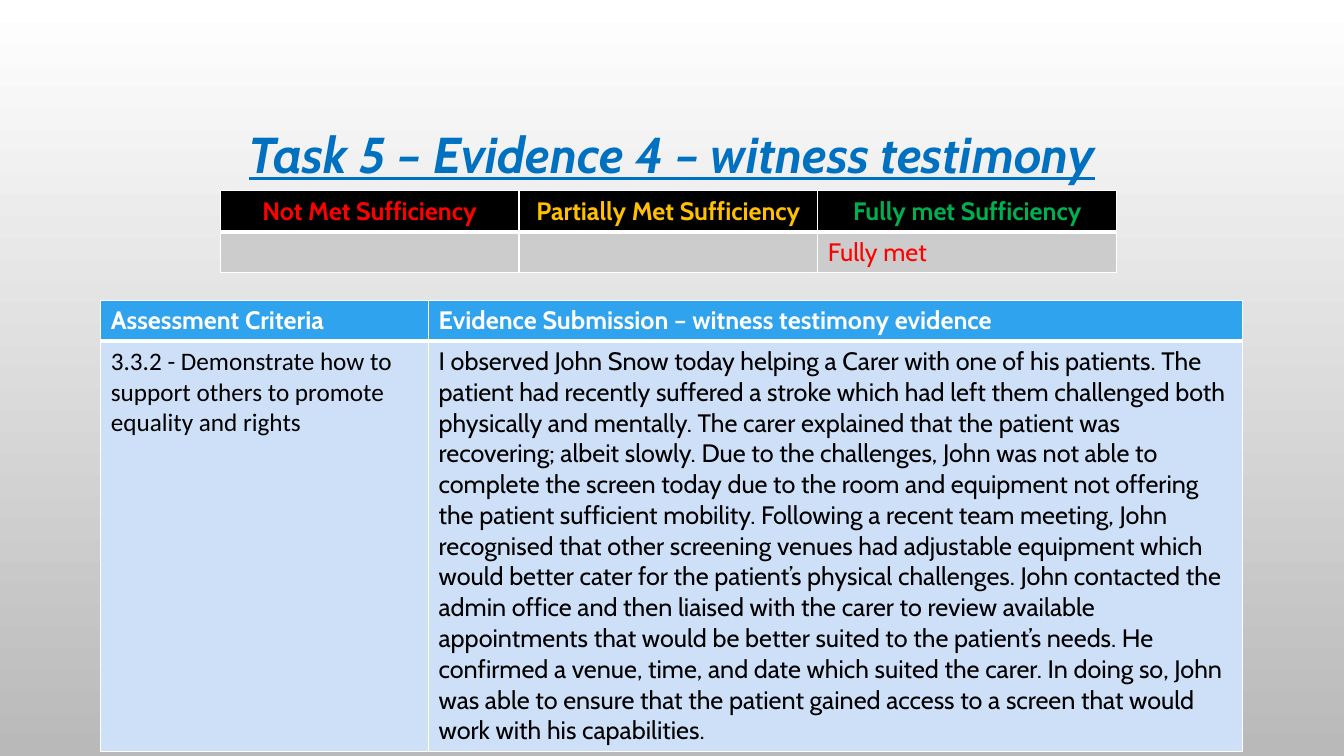
"""Build the witness testimony slide with its sufficiency and evidence tables."""
from lxml import etree
from pptx import Presentation
from pptx.dml.color import RGBColor
from pptx.enum import text
from pptx.oxml import ns
from pptx.util import Cm, Pt

WHITE = RGBColor(0xFF, 0xFF, 0xFF)
BLACK = RGBColor(0x00, 0x00, 0x00)
SHADE = RGBColor(0xB9, 0xB9, 0xB9)
TITLE_BLUE = RGBColor(0x00, 0x70, 0xC0)
HEADER_BLUE = RGBColor(0x2F, 0xA3, 0xEE)
PALE_BLUE = RGBColor(0xCD, 0xE0, 0xF8)
GREY = RGBColor(0xCC, 0xCC, 0xCC)
RED = RGBColor(0xFF, 0x00, 0x00)
AMBER = RGBColor(0xFF, 0xC0, 0x00)
GREEN = RGBColor(0x00, 0xB0, 0x50)

LEFT, CENTRE = text.PP_ALIGN.LEFT, text.PP_ALIGN.CENTER
ROW_HEIGHT = 1.03

TESTIMONY = (
    "I observed John Snow today helping a Carer with one of his patients.",
    "The patient had recently suffered a stroke which had left them challenged "
    "both physically and mentally.",
    "The carer explained that the patient was recovering; albeit slowly.",
    "Due to the challenges, John was not able to complete the screen today due "
    "to the room and equipment not offering the patient sufficient mobility.",
    "Following a recent team meeting, John recognised that other screening "
    "venues had adjustable equipment which would better cater for the "
    "patient’s physical challenges.",
    "John contacted the admin office and then liaised with the carer to review "
    "available appointments that would be better suited to the patient’s needs.",
    "He confirmed a venue, time, and date which suited the carer.",
    "In doing so, John was able to ensure that the patient gained access to a "
    "screen that would work with his capabilities.",
)


def write(frame, wording, colour, align=LEFT, **formats):
    """Put one formatted paragraph in a text frame."""
    paragraph = frame.paragraphs[0]
    paragraph.alignment = align
    run = paragraph.add_run()
    run.text = wording
    run.font.color.rgb = colour
    for name, value in {"name": "Cabin", "size": Pt(18), **formats}.items():
        setattr(run.font, name, value)


def add_borders(cell, widths):
    """Draw white borders of the given point widths on a cell."""
    properties = cell._tc.get_or_add_tcPr()
    for side, width in widths.items():
        border = etree.SubElement(properties, ns.qn(f"a:ln{side}"), w=str(Pt(width)))
        solid = etree.SubElement(border, ns.qn("a:solidFill"))
        etree.SubElement(solid, ns.qn("a:srgbClr"), val=str(WHITE))


def add_criteria_table(slide, left, top, widths, fills, rows):
    """Add a header row and a body row of (wording, colour, formats) cells."""
    table = slide.shapes.add_table(
        2, len(widths), Cm(left), Cm(top), Cm(sum(widths)), Cm(2 * ROW_HEIGHT)
    ).table
    for column, width in zip(table.columns, widths):
        column.width = Cm(width)
    borders = ({"L": 1, "R": 1, "T": 1, "B": 3}, {"L": 1, "R": 1, "B": 1})
    for index, entries in enumerate(rows):
        table.rows[index].height = Cm(ROW_HEIGHT)
        for cell, entry in zip(table.rows[index].cells, entries):
            add_borders(cell, borders[index])
            cell.fill.solid()
            cell.fill.fore_color.rgb = fills[index]
            if entry:
                wording, colour, formats = entry
                write(cell.text_frame, wording, colour, **{"bold": index == 0, **formats})


def add_title(slide, wording):
    """Place and format the slide title."""
    title = slide.shapes.title
    box = {"left": 2.54, "top": 1.73, "width": 28.78, "height": 4.45}
    for name, value in box.items():
        setattr(title, name, Cm(value))
    title.text_frame.vertical_anchor = text.MSO_ANCHOR.MIDDLE
    title.text_frame.paragraphs[0].line_spacing = 0.9
    write(title.text_frame, wording, TITLE_BLUE, CENTRE,
          size=Pt(36), bold=True, italic=True, underline=True)


def shade_background(slide):
    """Fill the background from white at the top to grey at the bottom."""
    fill = slide.background.fill
    fill.gradient()
    fill.gradient_angle = 270
    for stop, colour in zip(fill.gradient_stops, (WHITE, SHADE)):
        stop.color.rgb = colour


def main():
    """Build and save the slide."""
    deck = Presentation()
    deck.slide_width, deck.slide_height = Cm(33.87), Cm(19.05)
    slide = deck.slides.add_slide(deck.slide_layouts[5])
    shade_background(slide)
    add_title(slide, "Task 5 – Evidence 4 – witness testimony")
    centred = {"align": CENTRE}
    add_criteria_table(slide, 5.55, 4.81, [7.53] * 3, (BLACK, GREY), [
        [("Not Met Sufficiency", RED, centred),
         ("Partially Met Sufficiency", AMBER, centred),
         ("Fully met Sufficiency", GREEN, centred)],
        [None, None, ("Fully met", RED, {})],
    ])
    add_criteria_table(slide, 2.54, 7.57, [8.26, 20.52], (HEADER_BLUE, PALE_BLUE), [
        [("Assessment Criteria", WHITE, {}),
         ("Evidence Submission – witness testimony evidence", WHITE, {})],
        [("3.3.2 - Demonstrate how to support others to promote equality and rights",
          BLACK, {"name": "Calibri"}),
         (" ".join(TESTIMONY), BLACK, {})],
    ])
    deck.save("out.pptx")


if __name__ == "__main__":
    main()
